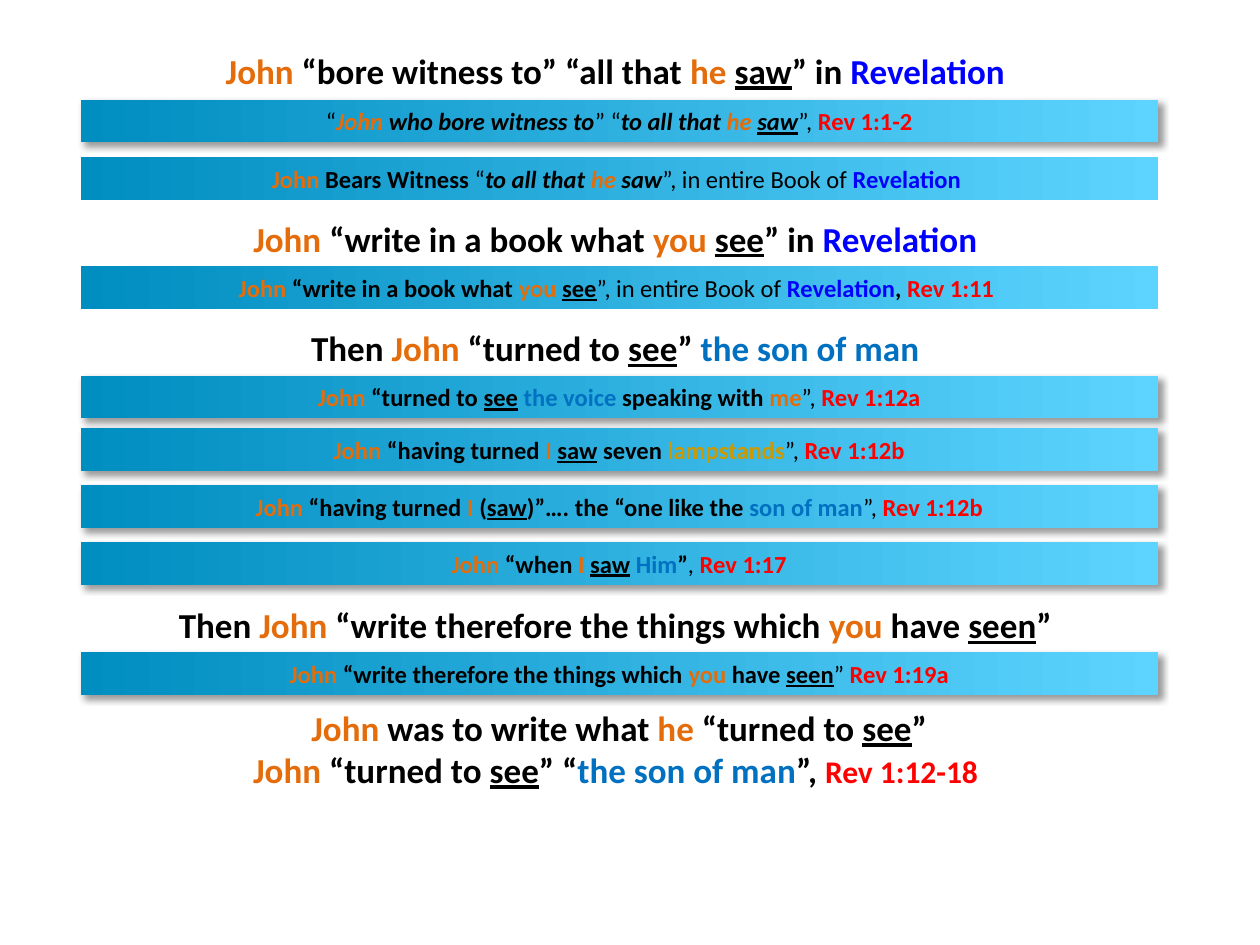
from dataclasses import dataclass

from lxml import etree
from pptx import Presentation
from pptx.dml.color import RGBColor
from pptx.enum.shapes import MSO_SHAPE
from pptx.enum.text import MSO_ANCHOR, MSO_AUTO_SIZE, PP_ALIGN
from pptx.oxml.ns import qn
from pptx.util import Pt


@dataclass(frozen=True)
class Theme:
    font: str = "Calibri"
    heading: int = 20
    bar: int = 14
    reference: int = 18
    black: str = "000000"
    orange: str = "E46C0A"
    red: str = "FF0000"
    blue: str = "0000FF"
    sky: str = "0070C0"
    gold: str = "CC9900"
    bar_from: str = "008DC0"
    bar_to: str = "5DD4FF"


T = Theme()
LEFT, WIDTH = 46, 615.6
HEADING_H, BAR_H, CLOSING_H = 31.7, 24.5, 56.2


# Each run is (text, colour, flags): b bold, i italic, u underlined
def k(text, flags="b"):
    return text, T.black, flags


def person(text, flags="b"):
    return text, T.orange, flags


def son(text):
    return text, T.sky, "b"


def ref(text):
    return text, T.red, "b"


def book(text):
    return text, T.blue, "b"


def seeing(text):
    return k(text, "bu")


JOHN = person("John")

# Section: top, heading runs, bars as (top, shadow, runs)
SECTIONS = [
    (24.5,
     [person("John "), k("“bore witness to” “all that "), person("he "),
      seeing("saw"), k("” in "), book("Revelation ")],
     [(56.9, True,
       [k("“", ""), person("John", "bi"), k(" who bore witness to", "bi"),
        k("” “", ""), k("to all that ", "bi"), person("he ", "bi"),
        k("saw", "biu"), k("”, ", ""), ref("Rev 1:1-2")]),
      (90, False,
       [JOHN, k(" Bears Witness "), k("“", ""), k("to all that ", "bi"),
        person("he", "bi"), k(" saw", "bi"),
        k("”, in entire Book of ", ""), book("Revelation ")])]),
    (120.2,
     [JOHN, k(" “write in a book what "), person("you "), seeing("see"),
      k("” in "), book("Revelation ")],
     [(152, False,
       [JOHN, k(" “write in a book what "), person("you "), seeing("see"),
        k("”, in entire Book of ", ""), book("Revelation"), k(", "),
        ref("Rev 1:11 ")])]),
    (182.9,
     [k("Then"), person(" John"), k(" “turned to "), seeing("see"), k("” "),
      son("the son of man ")],
     [(214.6, True,
       [JOHN, k(" “turned to "), seeing("see"), k(" "), son("the voice "),
        k("speaking with "), person("me"), k("”, ", ""), ref("Rev 1:12a")]),
      (244.8, True,
       [JOHN, k(" “having turned "), person("I "), seeing("saw"),
        k(" seven "), ("lampstands", T.gold, "b"), k("”, ", ""),
        ref("Rev 1:12b")]),
      (277.2, True,
       [JOHN, k(" “having turned "), person("I"), k(" ("), seeing("saw"),
        k(")”…. the “one like the "), son("son of man"), k("”, ", ""),
        ref("Rev 1:12b")]),
      (309.6, True,
       [JOHN, k(" “when "), person("I "), seeing("saw"), k(" "), son("Him"),
        k("”"), k(", ", ""), ref("Rev 1:17")])]),
    (341.3,
     [k("Then"), person(" John"), k(" “write therefore the things which "),
      person("you"), k(" have "), seeing("seen"), k("” ")],
     [(372.6, True,
       [JOHN, k(" “write therefore the things which "), person("you"),
        k(" have "), seeing("seen"), k("” ", ""), ref("Rev 1:19a")])]),
]

CLOSING_TOP = 399.6
CLOSING = [
    [JOHN, k(" was to write what "), person("he"), k(" “turned to "),
     seeing("see"), k("”")],
    [person("John "), k("“turned to "), seeing("see"), k("” “"),
     son("the son of man"), k("”, "), ref("Rev 1:12-18 ")],
]


def write_runs(p, runs, size):
    p.alignment = PP_ALIGN.CENTER
    for text, colour, flags in runs:
        r = p.add_run()
        r.text = text
        r.font.name, r.font.size = T.font, Pt(size)
        r.font.color.rgb = RGBColor.from_string(colour)
        r.font.bold = "b" in flags
        r.font.italic = "i" in flags
        r.font.underline = "u" in flags


def set_frame(sp):
    tf = sp.text_frame
    tf.word_wrap = True
    tf.auto_size = MSO_AUTO_SIZE.SHAPE_TO_FIT_TEXT
    tf.vertical_anchor = MSO_ANCHOR.MIDDLE
    return tf


def add_shadow(sp):
    effects = sp._element.spPr.find(qn("a:effectLst"))
    shadow = etree.SubElement(effects, qn("a:outerShdw"), blurRad=str(Pt(4)),
                              dist=str(Pt(3)), dir="2700000", algn="tl",
                              rotWithShape="0")
    colour = etree.SubElement(shadow, qn("a:srgbClr"), val=T.black)
    etree.SubElement(colour, qn("a:alpha"), val="40000")


def add_bar(s, left, top, width, runs, shadow):
    sp = s.shapes.add_shape(MSO_SHAPE.RECTANGLE, Pt(left), Pt(top),
                            Pt(width), Pt(BAR_H))
    sp.fill.gradient()
    sp.fill.gradient_angle = 0
    for stop, colour in zip(sp.fill.gradient_stops, (T.bar_from, T.bar_to)):
        stop.color.rgb = RGBColor.from_string(colour)
    sp.line.fill.background()
    sp.shadow.inherit = False
    if shadow:
        add_shadow(sp)
    write_runs(set_frame(sp).paragraphs[0], runs, T.bar)


def add_section(s, left, top, width, heading, bars, title=None):
    # The first heading is the slide title, the others are text boxes
    box = Pt(left), Pt(top), Pt(width), Pt(HEADING_H)
    sp = title or s.shapes.add_textbox(*box)
    sp.left, sp.top, sp.width, sp.height = box
    write_runs(set_frame(sp).paragraphs[0], heading, T.heading)
    for bar_top, shadow, runs in bars:
        add_bar(s, left, bar_top, width, runs, shadow)


def add_closing(s, left, top, width, lines):
    sp = s.shapes.add_textbox(Pt(left), Pt(top), Pt(width), Pt(CLOSING_H))
    tf = set_frame(sp)
    for i, runs in enumerate(lines):
        p = tf.add_paragraph() if i else tf.paragraphs[0]
        p.line_spacing = Pt(24)
        write_runs(p, runs, T.heading)
    # The closing verse reference is slightly smaller
    p.runs[-1].font.size = Pt(T.reference)


def main():
    prs = Presentation()
    prs.slide_width, prs.slide_height = Pt(720), Pt(540)
    s = prs.slides.add_slide(prs.slide_layouts[5])
    for i, (top, heading, bars) in enumerate(SECTIONS):
        title = None if i else s.shapes.title
        add_section(s, LEFT, top, WIDTH, heading, bars, title)
    add_closing(s, LEFT, CLOSING_TOP, WIDTH, CLOSING)
    prs.save("out.pptx")


if __name__ == "__main__":
    main()
